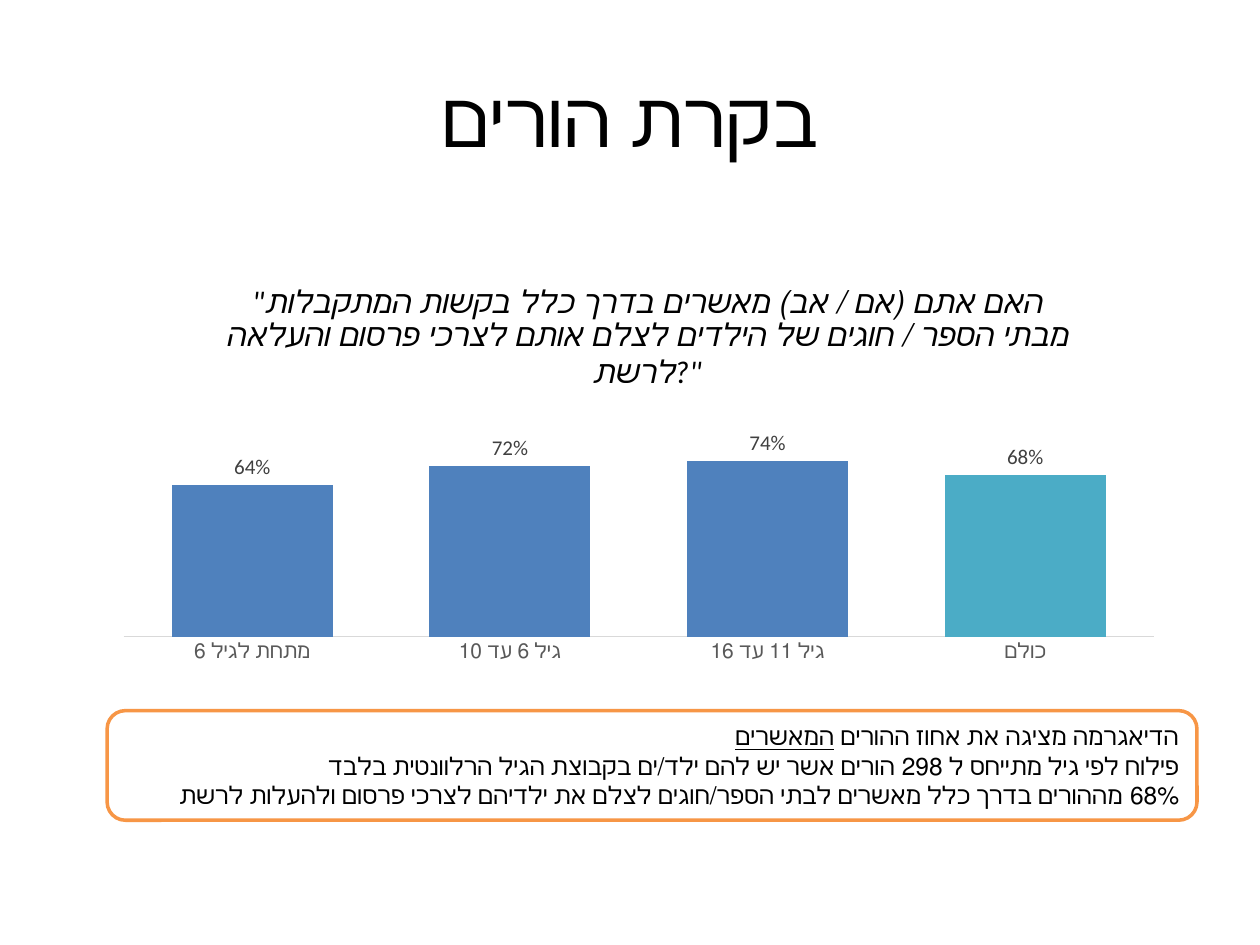
from lxml import etree
from pptx import Presentation
from pptx.chart.data import CategoryChartData
from pptx.dml.color import RGBColor
from pptx.enum import chart as chart_enum, shapes, text
from pptx.oxml import ns
from pptx.util import Inches, Pt

COLORS = {"black": "000000", "white": "FFFFFF", "orange": "F79646", "blue": "4F81BD",
          "teal": "4BACC6", "axis": "D9D9D9", "axis_text": "595959", "label": "404040"}

TITLE = "בקרת הורים"
QUESTION = ('"האם אתם (אם / אב) מאשרים בדרך כלל בקשות המתקבלות מבתי הספר / חוגים '
            'של הילדים לצלם אותם לצרכי פרסום והעלאה לרשת?"')
APPROVAL = {"מתחת לגיל 6": 0.64, "גיל 6 עד 10": 0.72, "גיל 11 עד 16": 0.74, "כולם": 0.68}
# Each note line is a list of (text, underlined) runs
NOTES = [
    [("הדיאגרמה מציגה את אחוז ההורים ", False), ("המאשרים", True)],
    [("פילוח לפי גיל מתייחס ל 298 הורים אשר יש להם ילד/ים בקבוצת הגיל הרלוונטית בלבד", False)],
    [("68% מההורים בדרך כלל מאשרים לבתי הספר/חוגים לצלם את ילדיהם לצרכי פרסום "
      "ולהעלות לרשת", False)],
]


def color(name):
    return RGBColor.from_string(COLORS[name])


def format_font(font, size, color_name="black", **values):
    for key, value in {"name": "Calibri", "size": Pt(size), **values}.items():
        setattr(font, key, value)
    font.color.rgb = color(color_name)


def place(shape, box):
    for key, value in zip(("left", "top", "width", "height"), box):
        setattr(shape, key, Inches(value))


def write_rtl(paragraph, runs, size, alignment):
    paragraph.alignment = alignment
    paragraph._p.get_or_add_pPr().set("rtl", "1")
    for words, underlined in runs:
        run = paragraph.add_run()
        run.text = words
        format_font(run.font, size, underline=underlined)


def set_layout(element, position, **values):
    """Fix a chart part at fractions of the chart area."""
    for old in element.findall(ns.qn("c:layout")):
        element.remove(old)
    layout = etree.Element(ns.qn("c:layout"))
    manual = etree.SubElement(layout, ns.qn("c:manualLayout"))
    for tag, value in values.items():
        etree.SubElement(manual, ns.qn(f"c:{tag}")).set("val", str(value))
    element.insert(position, layout)


def add_title(slide, box):
    title = slide.shapes.title
    place(title, box)
    title.text_frame.vertical_anchor = text.MSO_ANCHOR.MIDDLE
    write_rtl(title.text_frame.paragraphs[0], [(TITLE, False)], 44, text.PP_ALIGN.CENTER)


def add_approval_chart(slide, box):
    data = CategoryChartData(number_format="#,##0%")
    data.categories = list(APPROVAL)
    data.add_series("Series 1", list(APPROVAL.values()))
    chart = slide.shapes.add_chart(chart_enum.XL_CHART_TYPE.COLUMN_CLUSTERED,
                                   *map(Inches, box), data).chart
    chart.has_legend = False
    format_font(chart.font, 10)

    # Question above the columns
    chart.has_title = True
    paragraph = chart.chart_title.text_frame.paragraphs[0]
    run = paragraph.add_run()
    run.text = QUESTION
    format_font(run.font, 18, italic=True, bold=False)
    set_layout(chart.chart_title._element, 1, xMode="edge", yMode="edge", x=0.11, y=0.05)
    set_layout(chart._chartSpace.chart.plotArea, 0, layoutTarget="inner", xMode="edge",
               yMode="edge", x=0.02, y=0.35, w=0.96, h=0.57)

    # Axes
    value_axis, category_axis = chart.value_axis, chart.category_axis
    for key, value in {"minimum_scale": 0, "maximum_scale": 1, "visible": False,
                       "has_major_gridlines": False}.items():
        setattr(value_axis, key, value)
    category_axis.major_tick_mark = chart_enum.XL_TICK_MARK.NONE
    category_axis.format.line.color.rgb = color("axis")
    category_axis.format.line.width = Pt(0.75)
    format_font(category_axis.tick_labels.font, 12, "axis_text")

    # Columns, with the total in its own colour
    plot = chart.plots[0]
    for key, value in {"gap_width": 60, "overlap": -27, "vary_by_categories": False,
                       "has_data_labels": True}.items():
        setattr(plot, key, value)
    series = plot.series[0]
    total = series.points[len(APPROVAL) - 1]
    for part, name in ((series, "blue"), (total, "teal")):
        part.format.fill.solid()
        part.format.fill.fore_color.rgb = color(name)
    for key, value in {"show_value": True, "number_format": "#,##0%",
                       "number_format_is_linked": False,
                       "position": chart_enum.XL_LABEL_POSITION.OUTSIDE_END}.items():
        setattr(plot.data_labels, key, value)
    format_font(plot.data_labels.font, 12, "label")


def add_notes_box(slide, box):
    shape = slide.shapes.add_shape(shapes.MSO_SHAPE.ROUNDED_RECTANGLE, *map(Inches, box))
    shape.shadow.inherit = False
    shape.fill.solid()
    shape.fill.fore_color.rgb = color("white")
    shape.line.color.rgb = color("orange")
    shape.line.width = Pt(2)
    frame = shape.text_frame
    frame.word_wrap = True
    frame.vertical_anchor = text.MSO_ANCHOR.MIDDLE
    for index, runs in enumerate(NOTES):
        paragraph = frame.add_paragraph() if index else frame.paragraphs[0]
        write_rtl(paragraph, runs, 14, text.PP_ALIGN.RIGHT)


def main():
    presentation = Presentation()
    presentation.slide_width, presentation.slide_height = Inches(10), Inches(7.5)
    slide = presentation.slides.add_slide(presentation.slide_layouts[5])
    add_title(slide, (0.5, 0.3, 9, 1.25))
    add_notes_box(slide, (0.85, 5.64, 8.65, 0.87))
    add_approval_chart(slide, (0.81, 2.01, 8.52, 3.31))
    presentation.save("out.pptx")


if __name__ == "__main__":
    main()
